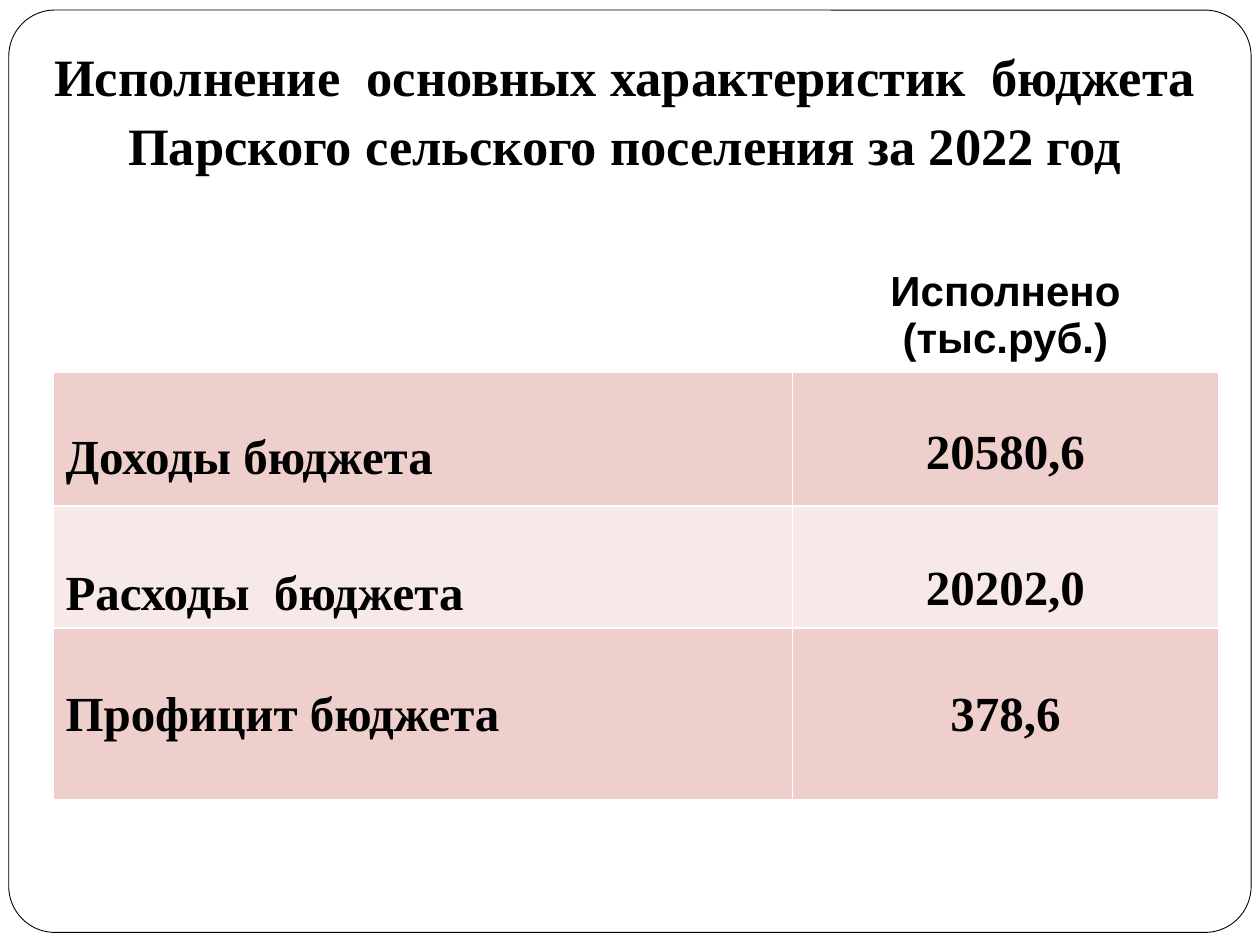
from lxml import etree
from pptx import Presentation
from pptx import util as u
from pptx.dml.color import RGBColor
from pptx.enum import shapes, text
from pptx.oxml import ns

Pt = u.Pt
hues = {"ink": "000000", "paper": "FFFFFF", "rose": "EFCFCC", "pale": "F7E9E8"}


def style(para, face, size):
    para.alignment = text.PP_ALIGN.CENTER
    font = para.font
    font.name, font.size, font.bold = face, Pt(size), True
    font.color.rgb = RGBColor.from_string(hues["ink"])


def edge(cell, side, width):
    props = cell._tc.get_or_add_tcPr()
    line = etree.SubElement(props, ns.qn("a:ln" + side), w=str(Pt(width)))
    fill = etree.SubElement(line, ns.qn("a:solidFill"))
    etree.SubElement(fill, ns.qn("a:srgbClr"), val=hues["paper"])


deck = Presentation()
deck.slide_width, deck.slide_height = Pt(720), Pt(540)
slide = deck.slides.add_slide(deck.slide_layouts[5])

title = slide.shapes.title
title.left, title.top, title.width, title.height = Pt(12.24), Pt(23.76), Pt(689.76), Pt(84.24)
frame = title.text_frame
frame.text = "Исполнение  основных характеристик  бюджета Парского сельского поселения за 2022 год"
frame.word_wrap = True
frame.auto_size = text.MSO_AUTO_SIZE.NONE
frame.vertical_anchor = text.MSO_ANCHOR.BOTTOM
frame.margin_left = frame.margin_right = frame.margin_bottom = Pt(7.2)
frame.margin_top = Pt(3.6)
head = frame.paragraphs[0]
style(head, "Times New Roman", 30)
head.line_spacing = 1.1
head.space_before = Pt(0)

border = slide.shapes.add_shape(
    shapes.MSO_SHAPE.ROUNDED_RECTANGLE, Pt(5.04), Pt(5.76), Pt(709.92), Pt(527.04))
border.adjustments[0] = 0.05
border.shadow.inherit = False
border.fill.solid()
border.fill.fore_color.rgb = RGBColor.from_string(hues["paper"])
border.line.color.rgb = RGBColor.from_string(hues["ink"])
border.line.width = Pt(0.5)
title.element.addprevious(border.element)

rows = [
    ("", "Исполнено (тыс.руб.)", 62, None),
    ("Доходы бюджета", "20580,6", 77.5, "rose"),
    ("Расходы  бюджета", "20202,0", 69.5, "pale"),
    ("Профицит бюджета", "378,6", 98, "rose"),
]
widths = [422.64, 243.36]
total = sum(row[2] for row in rows)
table = slide.shapes.add_table(
    len(rows), 2, Pt(30.24), Pt(149.76), Pt(sum(widths)), Pt(total)).table
for col, width in zip(table.columns, widths):
    col.width = Pt(width)

for r, (label, value, height, hue) in enumerate(rows):
    table.rows[r].height = Pt(height)
    for c, words in enumerate((label, value)):
        cell = table.cell(r, c)
        for side in "LRTB":
            thick = (r, side) in ((0, "B"), (1, "T"))
            edge(cell, side, 3 if thick else 1)
        cell.text = words
        para = cell.text_frame.paragraphs[0]
        if hue is None:
            cell.fill.background()
            style(para, "Arial", 24)
            continue
        cell.fill.solid()
        cell.fill.fore_color.rgb = RGBColor.from_string(hues[hue])
        style(para, "Times New Roman", 28)
        cell.margin_top = Pt(34.6)
        if c == 0:
            para.alignment = text.PP_ALIGN.LEFT
        elif r < 3:
            cell.margin_left = cell.margin_right = Pt(0.72)
            cell.margin_top, cell.margin_bottom = Pt(31.7), Pt(0)

deck.save("out.pptx")
